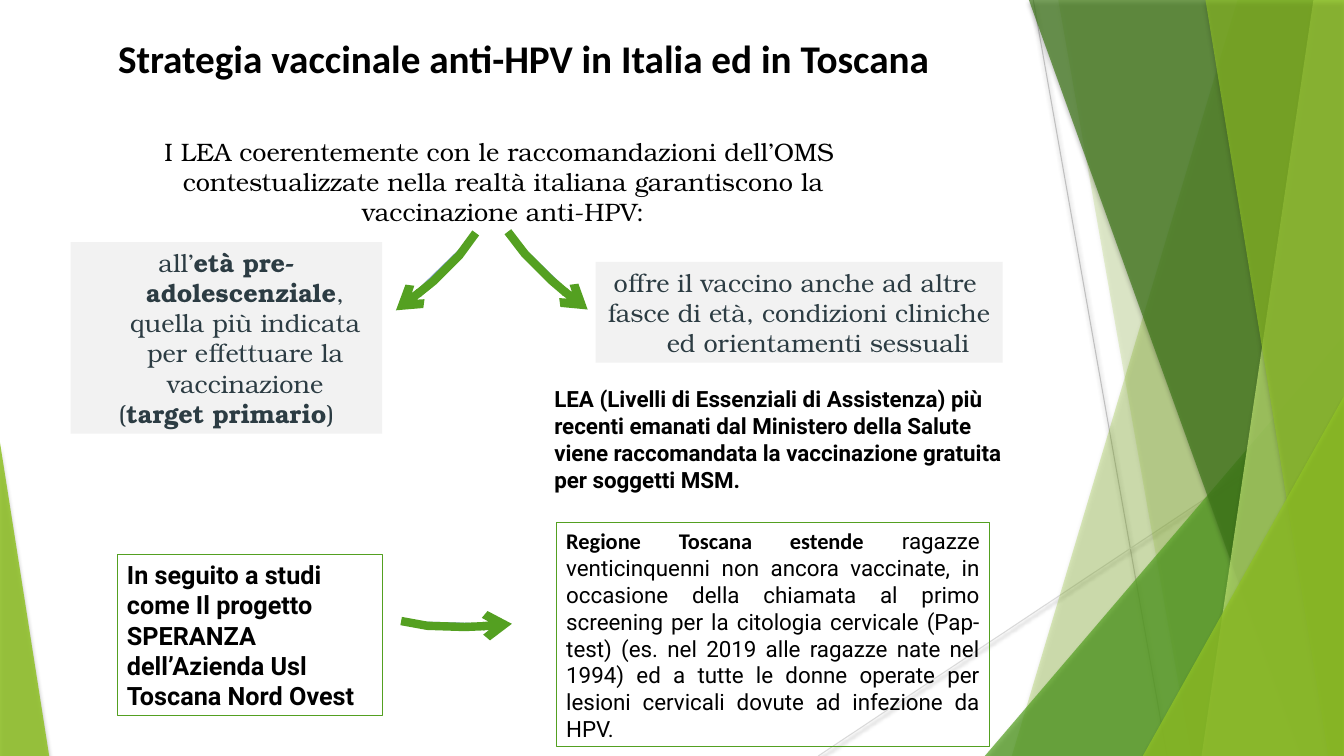
from pptx import Presentation, util as u
from pptx.dml.color import RGBColor
from pptx.enum import shapes as es, text as et
from pptx.oxml import parse_xml
from pptx.oxml.ns import nsdecls, qn

BLACK = RGBColor(0x00, 0x00, 0x00)
SLATE = RGBColor(0x2C, 0x3C, 0x43)
PALE_GREY = RGBColor(0xF2, 0xF2, 0xF2)
LINE_GREY = RGBColor(0xBF, 0xBF, 0xBF)
LIGHT_GREY = RGBColor(0xD9, 0xD9, 0xD9)
LIME = RGBColor(0x90, 0xC2, 0x26)
PALE_LIME = RGBColor(0xC0, 0xE4, 0x74)
GREEN = RGBColor(0x54, 0xA0, 0x21)
DARK_GREEN = RGBColor(0x3F, 0x78, 0x19)
BLUE = RGBColor(0x82, 0xA1, 0xCC)

WIDTH, HEIGHT = 33.87, 19.05
SERIF, SANS, TITLE_FONT = "TeX Gyre Bonum", "Roboto", "Calibri"


def write(shape, *paragraphs, font=SANS, bold_font=None, size=18, color=BLACK,
          align=et.PP_ALIGN.LEFT, hanging=0):
    """Fill a shape with paragraphs; text between ** marks is bold."""
    frame = shape.text_frame
    frame.word_wrap = True
    frame.auto_size = et.MSO_AUTO_SIZE.NONE
    frame.vertical_anchor = et.MSO_ANCHOR.TOP
    for number, wording in enumerate(paragraphs):
        paragraph = frame.add_paragraph() if number else frame.paragraphs[0]
        paragraph.alignment = align
        if hanging:
            properties = paragraph._p.get_or_add_pPr()
            properties.set("marL", str(u.Cm(hanging)))
            properties.set("indent", str(-u.Cm(hanging)))
        for part, words in enumerate(wording.split("**")):
            if words:
                run = paragraph.add_run()
                run.text = words
                run.font.bold = part % 2 == 1
                run.font.name = bold_font if bold_font and run.font.bold else font
                run.font.size = u.Pt(size)
                run.font.color.rgb = color


def cast_shadow(shape, opacity, blur, distance):
    shape._element.spPr.append(parse_xml(
        f'<a:effectLst {nsdecls("a")}><a:outerShdw blurRad="{u.Pt(blur)}" '
        f'dist="{u.Pt(distance)}" dir="5400000" rotWithShape="0"><a:srgbClr val="000000">'
        f'<a:alpha val="{opacity * 1000}"/></a:srgbClr></a:outerShdw></a:effectLst>'))


deck = Presentation()
deck.slide_width, deck.slide_height = u.Cm(WIDTH), u.Cm(HEIGHT)
slide = deck.slides.add_slide(deck.slide_layouts[5])
canvas = slide.shapes

# Thin grey lines behind the facets
for x1, y1, x2, y2, color in [(26.04, 0, 29.41, HEIGHT, LINE_GREY),
                              (WIDTH, 10.24, 20.62, HEIGHT, LIGHT_GREY)]:
    ray = canvas.add_connector(es.MSO_CONNECTOR.STRAIGHT,
                               u.Cm(x1), u.Cm(y1), u.Cm(x2), u.Cm(y2))
    ray.line.color.rgb = color
    ray.line.width = u.Pt(0.75)
    cast_shadow(ray, 38, 3.1, 1.6)

# Translucent facets: corner points, colour, opacity
right_edge = [(WIDTH, 0), (WIDTH, HEIGHT)]
facets = [
    ([(31.19, 0), *right_edge, (25.5, HEIGHT)], LIME, 30),
    ([(26.67, 0), *right_edge, (30.02, HEIGHT)], LIME, 20),
    ([(WIDTH, 8.46), (WIDTH, HEIGHT), (24.82, HEIGHT)], GREEN, 72),
    ([(25.93, 0), *right_edge, (32.79, HEIGHT)], DARK_GREEN, 70),
    ([(33.1, 0), *right_edge, (30.28, HEIGHT)], PALE_LIME, 70),
    ([(30.38, 0), *right_edge, (33.48, HEIGHT)], LIME, 65),
    ([(WIDTH, 9.98), (WIDTH, HEIGHT), (28.8, HEIGHT)], LIME, 80),
    ([(0, 11.15), (1.24, HEIGHT), (0, HEIGHT)], LIME, 85),
]
for corners, color, opacity in facets:
    points = [(u.Cm(x), u.Cm(y)) for x, y in corners]
    outline = canvas.build_freeform(*points[0])
    outline.add_line_segments(points[1:], close=True)
    facet = outline.convert_to_shape()
    facet.fill.solid()
    facet.fill.fore_color.rgb = color
    tint = facet._element.spPr.find(qn("a:solidFill"))[0]
    tint.append(parse_xml(f'<a:alpha {nsdecls("a")} val="{opacity * 1000}"/>'))
    facet.line.fill.background()
    cast_shadow(facet, 35, 3, 2)

# Title
title = canvas.title
title.left, title.top, title.width, title.height = map(u.Cm, (2.72, 0.74, 22.81, 1.42))
write(title, "**Strategia vaccinale anti-HPV in Italia ed in Toscana**",
      font=TITLE_FONT, size=28)

# Free text: the introduction and the note on LEA
intro = canvas.add_textbox(*map(u.Cm, (3.28, 3.3, 18.8, 2.54)))
write(intro, "I LEA coerentemente con le raccomandazioni dell’OMS ",
      "contestualizzate nella realtà italiana garantiscono la vaccinazione anti-HPV:",
      font=SERIF, align=et.PP_ALIGN.CENTER)
lea_note = canvas.add_textbox(*map(u.Cm, (13.72, 9.58, 12.07, 2.95)))
write(lea_note, "**LEA (Livelli di Essenziali di Assistenza) più recenti emanati dal Ministero "
      "della Salute viene raccomandata la vaccinazione gratuita per soggetti MSM.**", size=16)

# Grey panels with the two target groups, green frames with the regional policy
panel = dict(font=SERIF, color=SLATE, align=et.PP_ALIGN.CENTER, hanging=0.95)
boxes = [
    ((15.01, 6.6, 10.26, 2.54), PALE_GREY, panel,
     ["offre il vaccino anche ad altre ",
      "fasce di età, condizioni cliniche ed orientamenti sessuali"]),
    ((1.78, 6.1, 7.85, 4.83), PALE_GREY, panel,
     ["all’**età pre-adolescenziale**, quella più indicata per effettuare la vaccinazione",
      "(**target primario**)"]),
    ((14.02, 13.16, 10.92, 5.66), None,
     dict(bold_font=TITLE_FONT, size=16, align=et.PP_ALIGN.JUSTIFY),
     ["**Regione Toscana estende **ragazze venticinquenni non ancora vaccinate, in occasione "
      "della chiamata al primo screening per la citologia cervicale (Pap-test) (es. nel 2019 "
      "alle ragazze nate nel 1994) ed a tutte le donne operate per lesioni cervicali dovute "
      "ad infezione da HPV."]),
    ((2.95, 13.97, 6.68, 4.06), None, {},
     ["**In seguito a studi come Il progetto SPERANZA dell’Azienda Usl Toscana Nord Ovest**"]),
]
for place, fill, style, wording in boxes:
    box = canvas.add_shape(es.MSO_SHAPE.RECTANGLE, *map(u.Cm, place))
    box.shadow.inherit = False
    if fill:
        box.fill.solid()
        box.fill.fore_color.rgb = fill
        box.line.fill.background()
    else:
        box.fill.background()
        box.line.color.rgb = GREEN
        box.line.width = u.Pt(0)
    write(box, *wording, **style)

# Curved arrows, listed from the tip backwards
arrows = [
    [(14.81, 7.8), (14.43, 7.52), (13.89, 7.06), (13.23, 6.4), (12.8, 5.84)],
    [(9.98, 7.82), (10.36, 7.54), (10.92, 7.09), (11.58, 6.43), (11.99, 5.87)],
    [(12.9, 15.72), (12.42, 15.77), (11.71, 15.8), (10.77, 15.77), (10.11, 15.65)],
]
for curve in arrows:
    points = [(u.Cm(x), u.Cm(y)) for x, y in curve]
    outline = canvas.build_freeform(*points[0])
    outline.add_line_segments(points[1:], close=False)
    arrow = outline.convert_to_shape()
    arrow.shadow.inherit = False
    arrow.fill.solid()
    arrow.fill.fore_color.rgb = BLUE
    arrow.line.color.rgb = GREEN
    arrow.line.width = u.Pt(6)
    arrow._element.spPr.find(qn("a:ln")).append(
        parse_xml(f'<a:headEnd {nsdecls("a")} type="arrow"/>'))

deck.save("out.pptx")
